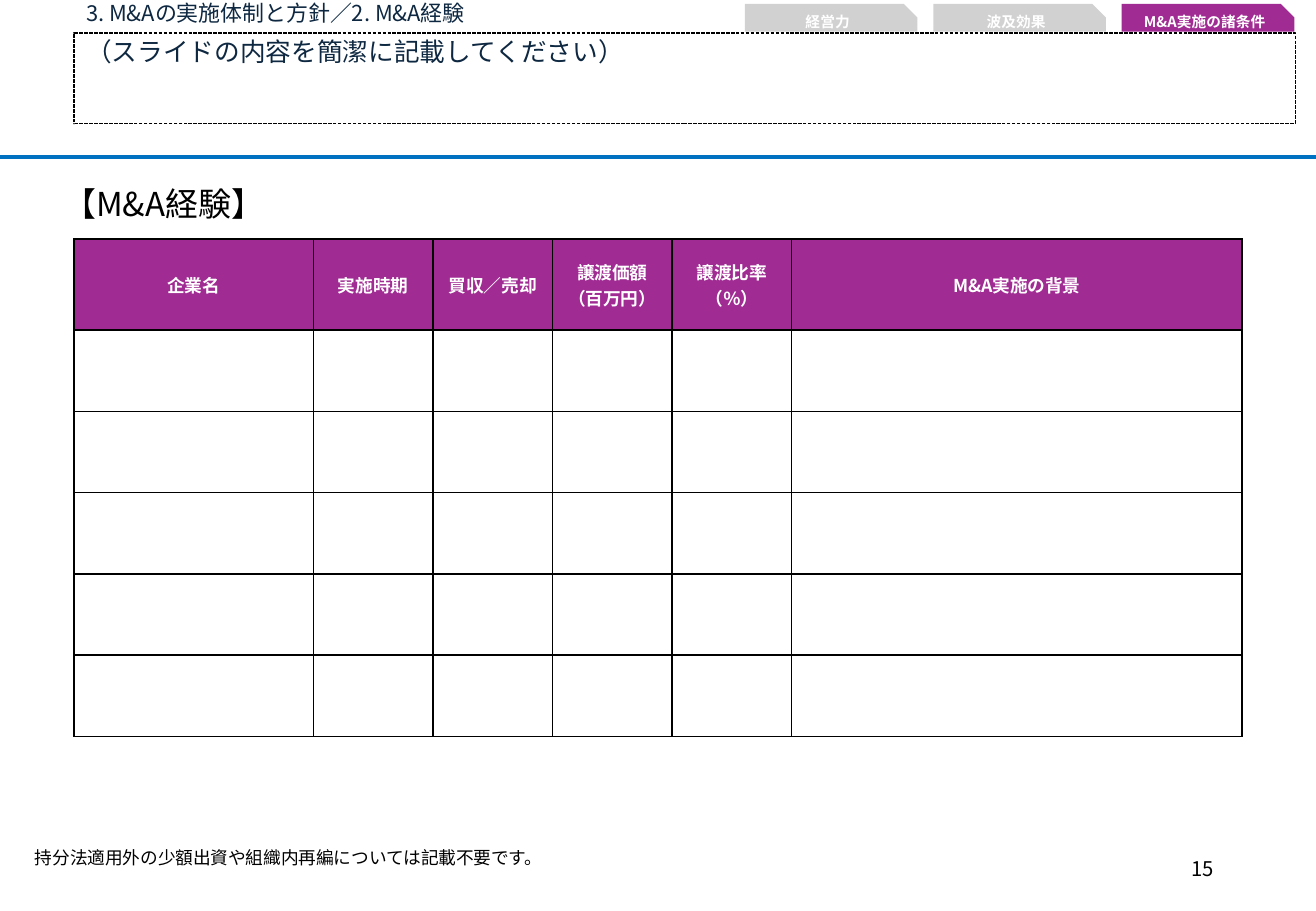
"""Build the M&A experience slide with its section tabs and blank table."""
import pptx
import pptx.dml.color
import pptx.enum.dml
import pptx.enum.shapes
import pptx.enum.text
import pptx.oxml
import pptx.oxml.ns
import pptx.util

Cm = pptx.util.Cm
Pt = pptx.util.Pt
ALIGN = pptx.enum.text.PP_ALIGN
ANCHOR = pptx.enum.text.MSO_ANCHOR
SHAPE = pptx.enum.shapes.MSO_SHAPE

FONT = "Noto Sans CJK JP"
NAVY, BLACK, WHITE = "0E2841", "000000", "FFFFFF"
PURPLE, GREY, BLUE = "A02B93", "D1D1D1", "0070C0"

SECTION = "3. M&Aの実施体制と方針／2. M&A経験"
SUMMARY = "（スライドの内容を簡潔に記載してください）"
HEADING = "【M&A経験】"
NOTE = "持分法適用外の少額出資や組織内再編については記載不要です。"
PAGE_NUMBER = "15"
TABS = [("経営力", GREY), ("波及効果", GREY), ("M&A実施の諸条件", PURPLE)]
COLUMNS = [
    ("企業名", 5.0),
    ("実施時期", 2.5),
    ("買収／売却", 2.5),
    ("譲渡価額\n（百万円）", 2.5),
    ("譲渡比率\n（％）", 2.5),
    ("M&A実施の背景", 9.41),
]
ROW_HEIGHTS = [1.9] + [1.7] * 5

PAGE_WIDTH, PAGE_HEIGHT = 27.51, 19.05
LEFT = 1.55
TAB_LEFT, TAB_WIDTH, TAB_STEP = 15.57, 3.61, 3.94


def colour(value):
    return pptx.dml.color.RGBColor.from_string(value)


def lengths(*values):
    return [Cm(value) for value in values]


def write(frame, text, size, ink=BLACK, bold=False, align=ALIGN.LEFT,
          anchor=ANCHOR.TOP, spacing=None):
    frame.word_wrap = True
    frame.vertical_anchor = anchor
    for index, line in enumerate(text.split("\n")):
        para = frame.add_paragraph() if index else frame.paragraphs[0]
        para.alignment = align
        if spacing:
            para.line_spacing = spacing
        span = para.add_run()
        span.text = line
        span.font.size = Pt(size)
        span.font.bold = bold
        span.font.color.rgb = colour(ink)
        span.font.name = FONT
        east_asian = pptx.oxml.parse_xml(
            f'<a:ea {pptx.oxml.ns.nsdecls("a")} typeface="{FONT}"/>')
        span.font._element.append(east_asian)


def add_text(page, place, text, size, **style):
    box = page.shapes.add_textbox(*lengths(*place))
    write(box.text_frame, text, size, **style)


def add_rule(page):
    rule = page.shapes.add_connector(
        pptx.enum.shapes.MSO_CONNECTOR.STRAIGHT, *lengths(0, 3.28, PAGE_WIDTH, 3.28))
    rule.line.color.rgb = colour(BLUE)
    rule.line.width = Pt(2)
    rule._element.spPr.append(pptx.oxml.parse_xml(
        f'<a:effectLst {pptx.oxml.ns.nsdecls("a")}/>'))


def add_summary(page):
    box = page.shapes.add_shape(SHAPE.RECTANGLE, *lengths(LEFT, 0.69, 25.53, 1.9))
    box.shadow.inherit = False
    box.fill.background()
    box.line.color.rgb = colour(BLACK)
    box.line.width = Pt(0.75)
    box.line.dash_style = pptx.enum.dml.MSO_LINE.SQUARE_DOT
    write(box.text_frame, SUMMARY, 15.2, ink=NAVY, spacing=0.9)


def add_tabs(page):
    for index, (label, fill) in enumerate(TABS):
        left = TAB_LEFT + index * TAB_STEP
        tab = page.shapes.add_shape(
            SHAPE.SNIP_1_RECTANGLE, *lengths(left, 0.08, TAB_WIDTH, 0.58))
        tab.adjustments[0] = 0.5
        tab.shadow.inherit = False
        tab.fill.solid()
        tab.fill.fore_color.rgb = colour(fill)
        tab.line.fill.background()
        write(tab.text_frame, label, 8.7, ink=WHITE, bold=True,
              align=ALIGN.CENTER, anchor=ANCHOR.MIDDLE)


def add_borders(cell):
    properties = cell._tc.get_or_add_tcPr()
    for position, side in enumerate(("lnL", "lnR", "lnT", "lnB")):
        properties.insert(position, pptx.oxml.parse_xml(
            f'<a:{side} {pptx.oxml.ns.nsdecls("a")} w="{Pt(1)}"><a:solidFill>'
            f'<a:srgbClr val="{BLACK}"/></a:solidFill></a:{side}>'))


def add_experience_table(page):
    widths = [width for _, width in COLUMNS]
    table = page.shapes.add_table(
        len(ROW_HEIGHTS), len(COLUMNS),
        *lengths(LEFT, 5, sum(widths), sum(ROW_HEIGHTS))).table
    table.horz_banding = False
    for column, width in zip(table.columns, widths):
        column.width = Cm(width)
    for row, height in zip(table.rows, ROW_HEIGHTS):
        row.height = Cm(height)
    for cell in table.iter_cells():
        cell.fill.background()
        add_borders(cell)
    for cell, (label, _) in zip(table.rows[0].cells, COLUMNS):
        cell.fill.solid()
        cell.fill.fore_color.rgb = colour(PURPLE)
        cell.vertical_anchor = ANCHOR.MIDDLE
        write(cell.text_frame, label, 10.5, ink=WHITE, bold=True,
              align=ALIGN.CENTER, anchor=None)


def main():
    deck = pptx.Presentation()
    deck.slide_width, deck.slide_height = lengths(PAGE_WIDTH, PAGE_HEIGHT)
    page = deck.slides.add_slide(deck.slide_layouts[6])
    add_rule(page)
    add_text(page, (LEFT, -0.08, 14.25, 0.76), SECTION, 13, ink=NAVY, spacing=0.9)
    add_summary(page)
    add_text(page, (0.48, 17.58, 26.54, 0.71), NOTE, 10.5)
    add_experience_table(page)
    add_text(page, (1.07, 3.71, 7.29, 1.09), HEADING, 19.5)
    add_tabs(page)
    add_text(page, (19.43, 17.65, 6.2, 1.02), PAGE_NUMBER, 12,
             align=ALIGN.RIGHT, anchor=ANCHOR.MIDDLE)
    deck.save("out.pptx")


if __name__ == "__main__":
    main()
